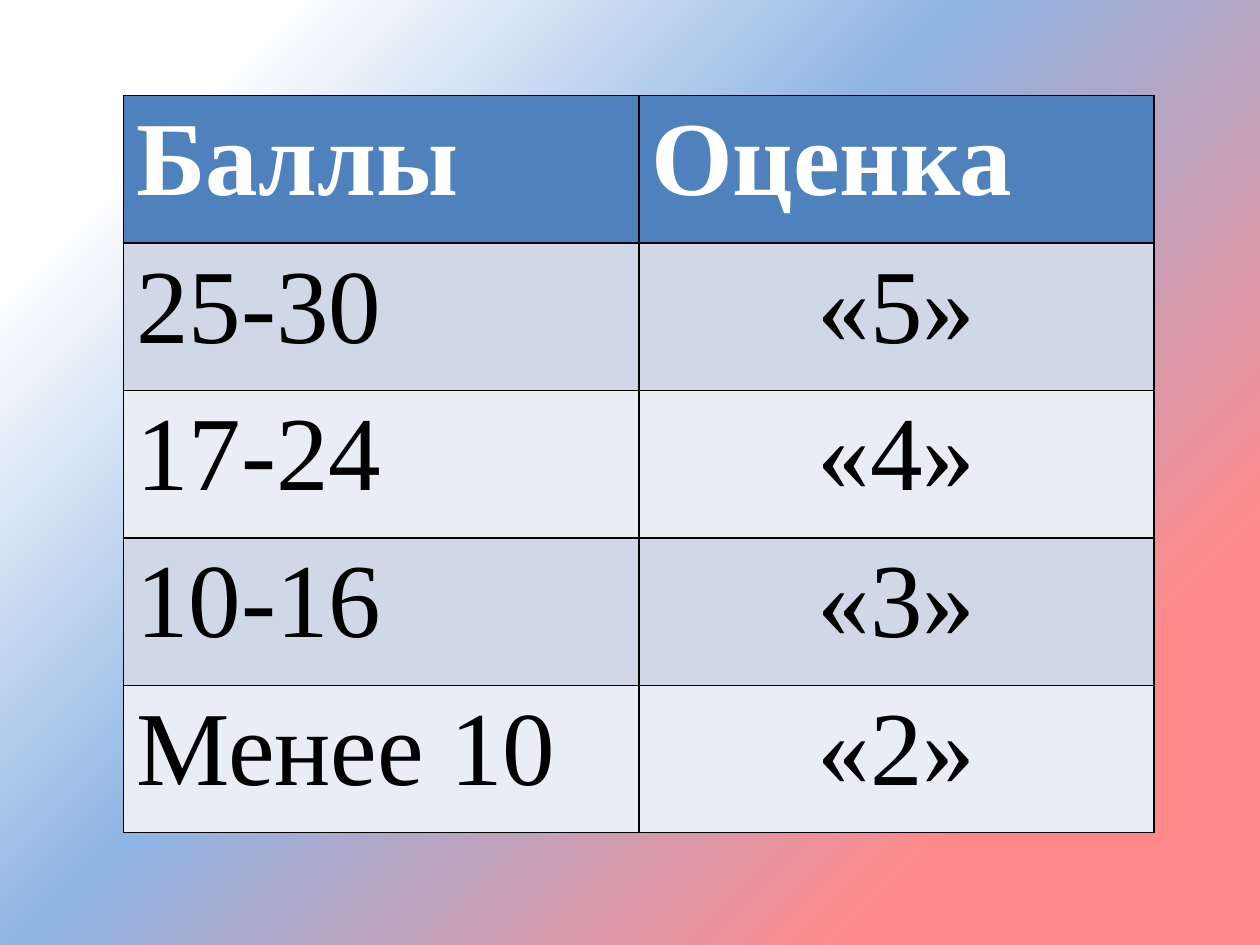
from dataclasses import dataclass
from typing import Any

from lxml.etree import SubElement
from pptx import Presentation
from pptx.dml.color import RGBColor
from pptx.enum.text import PP_ALIGN
from pptx.oxml.ns import qn
from pptx.util import Inches, Pt

WHITE = RGBColor(0xFF, 0xFF, 0xFF)
BLACK = RGBColor(0x00, 0x00, 0x00)
BLUE = RGBColor(0x4F, 0x81, 0xBD)
BANDS = (RGBColor(0xD0, 0xD8, 0xE8), RGBColor(0xE9, 0xED, 0xF4))
STOPS = (
    (13, WHITE),
    (44, RGBColor(0x8E, 0xB4, 0xE3)),
    (82, RGBColor(0xFF, 0x89, 0x89)),
)
WIDE, HIGH = Inches(10), Inches(7.5)
LEFT, TOP = Inches(0.98), Inches(0.76)
COL, ROW = Inches(4.09), Inches(1.17)
FONT = {"name": "Times New Roman", "size": Pt(60)}


@dataclass
class Grade:
    points: str
    mark: str


HEAD = Grade("Баллы", "Оценка")
GRADES = [
    Grade("25-30", "«5»"),
    Grade("17-24", "«4»"),
    Grade("10-16", "«3»"),
    Grade("Менее 10", "«2»"),
]


def add_color(node: Any, color: RGBColor) -> None:
    SubElement(node, qn("a:srgbClr"), val=str(color))


def paint_back(slide: Any) -> None:
    """Fill the background with a diagonal three-colour gradient."""
    slide.background.fill.gradient()
    grad = next(slide.element.iter(qn("a:gradFill")))
    for part in list(grad):
        grad.remove(part)
    stops = SubElement(grad, qn("a:gsLst"))
    for share, color in STOPS:
        add_color(SubElement(stops, qn("a:gs"), pos=str(share * 1000)), color)
    SubElement(grad, qn("a:lin"), ang=str(45 * 60000), scaled="0")


def add_edges(cell: Any) -> None:
    """Draw the four borders, which must come before the cell's fill."""
    props = cell._tc.get_or_add_tcPr()
    for side in ("lnL", "lnR", "lnT", "lnB"):
        line = SubElement(props, qn(f"a:{side}"), w=str(Pt(1)))
        add_color(SubElement(line, qn("a:solidFill")), BLACK)


def set_cell(cell: Any, text: str, fill: RGBColor, color: RGBColor,
             bold: bool, align: PP_ALIGN) -> None:
    add_edges(cell)
    cell.fill.solid()
    cell.fill.fore_color.rgb = fill
    cell.text = text
    para = cell.text_frame.paragraphs[0]
    para.alignment = align
    font = para.runs[0].font
    for key, value in {**FONT, "bold": bold}.items():
        setattr(font, key, value)
    font.color.rgb = color


def add_grades(slide: Any) -> None:
    rows = [HEAD, *GRADES]
    table = slide.shapes.add_table(
        len(rows), 2, LEFT, TOP, 2 * COL, len(rows) * ROW).table
    for row, grade in enumerate(rows):
        head = row == 0
        fill = BLUE if head else BANDS[(row - 1) % 2]
        color = WHITE if head else BLACK
        align = PP_ALIGN.LEFT if head else PP_ALIGN.CENTER
        set_cell(table.cell(row, 0), grade.points, fill, color, head,
                 PP_ALIGN.LEFT)
        set_cell(table.cell(row, 1), grade.mark, fill, color, head, align)


def main() -> None:
    deck = Presentation()
    deck.slide_width, deck.slide_height = WIDE, HIGH
    # Blank layout: the slide has no title
    slide = deck.slides.add_slide(deck.slide_layouts[6])
    paint_back(slide)
    add_grades(slide)
    deck.save("out.pptx")


if __name__ == "__main__":
    main()
